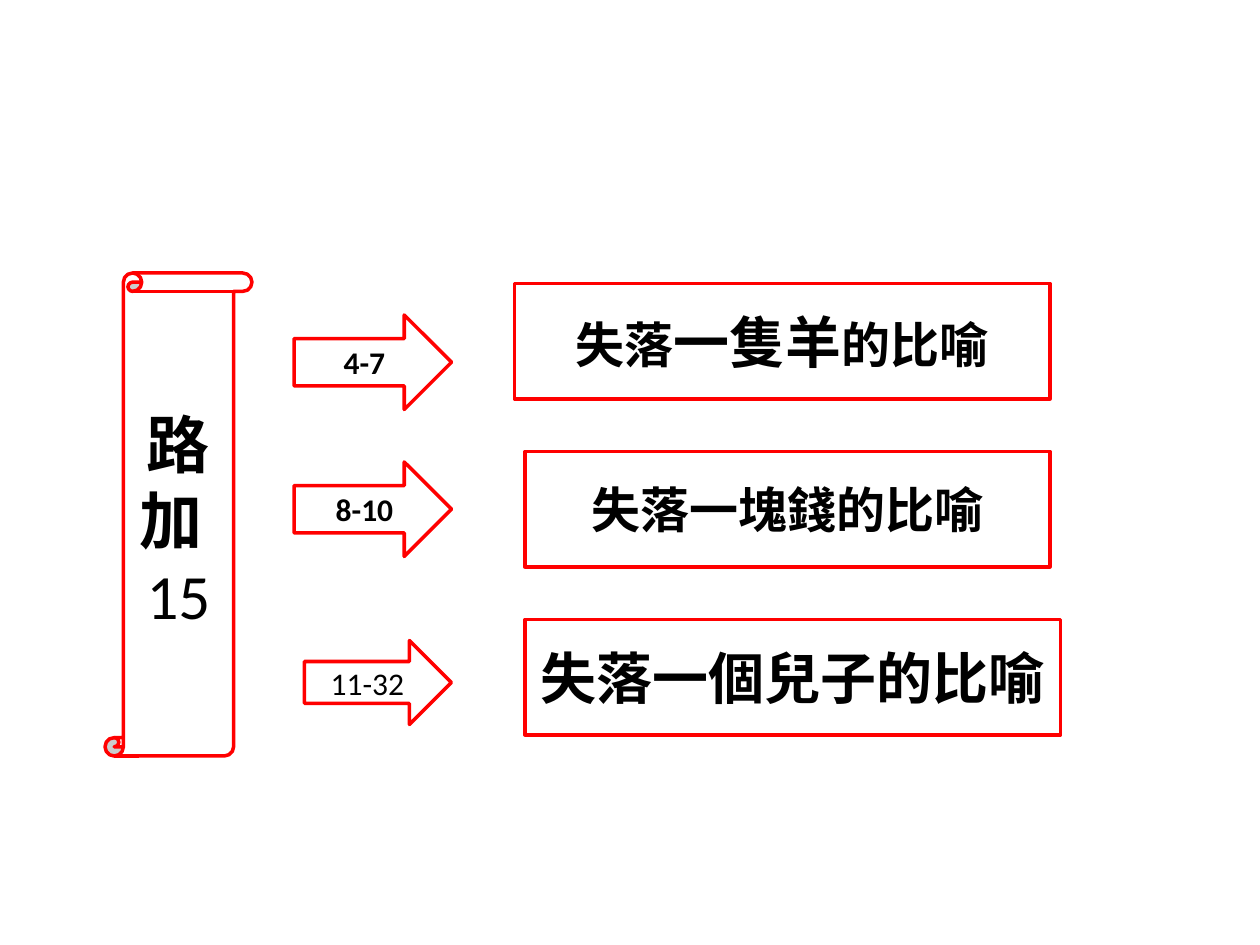
from dataclasses import dataclass

from pptx import Presentation
from pptx.dml.color import RGBColor
from pptx.enum.shapes import MSO_SHAPE
from pptx.enum.text import MSO_ANCHOR, PP_ALIGN
from pptx.slide import Slide
from pptx.util import Pt

COLORS = {"paper": "FFFFFF", "outline": "FF0000", "text": "000000"}
FONT = "Calibri"


@dataclass
class Span:
    text: str
    size: float
    bold: bool = True


@dataclass
class Panel:
    kind: MSO_SHAPE
    left: float
    top: float
    width: float
    height: float
    paragraphs: list[list[Span]]


def draw_panel(page: Slide, panel: Panel) -> None:
    """Draw a red-outlined shape with centred text."""
    box = page.shapes.add_shape(
        panel.kind, Pt(panel.left), Pt(panel.top), Pt(panel.width), Pt(panel.height)
    )
    box.shadow.inherit = False
    box.fill.solid()
    box.fill.fore_color.rgb = RGBColor.from_string(COLORS["paper"])
    box.line.color.rgb = RGBColor.from_string(COLORS["outline"])
    box.line.width = Pt(2)

    frame = box.text_frame
    frame.word_wrap = True
    frame.vertical_anchor = MSO_ANCHOR.MIDDLE
    for index, spans in enumerate(panel.paragraphs):
        para = frame.paragraphs[0] if index == 0 else frame.add_paragraph()
        para.alignment = PP_ALIGN.CENTER
        for span in spans:
            run = para.add_run()
            run.text = span.text
            run.font.name = FONT
            run.font.size = Pt(span.size)
            run.font.bold = span.bold
            run.font.color.rgb = RGBColor.from_string(COLORS["text"])


# Chapter scroll
SCROLL = Panel(
    MSO_SHAPE.VERTICAL_SCROLL, 60, 156, 84, 276,
    [[Span("路", 36)], [Span("加 ", 36)], [Span("15", 36, bold=False)]],
)

# Verse arrows
ARROW = MSO_SHAPE.RIGHT_ARROW
ARROWS = [
    Panel(ARROW, 168, 180, 90, 54, [[Span(" 4-7", 18)]]),
    Panel(ARROW, 168, 264, 90, 54, [[Span(" 8-10", 18)]]),
    Panel(ARROW, 174, 366, 84, 48, [[Span("11-32", 18, bold=False)]]),
]

# Parable boxes: left, width and text, evenly spaced down the page
PARABLE_TOP, PARABLE_PITCH, PARABLE_HEIGHT = 162, 96, 66
PARABLES = [
    (294, 306, [Span("失落", 28), Span("一隻羊", 32), Span("的比喻", 28)]),
    (300, 300, [Span("失落一塊錢的比喻", 28)]),
    (300, 306, [Span("失落一個兒子的比喻", 32)]),
]


def main() -> None:
    deck = Presentation()
    deck.slide_width, deck.slide_height = Pt(720), Pt(540)
    page = deck.slides.add_slide(deck.slide_layouts[6])

    for row, (left, width, spans) in enumerate(PARABLES):
        top = PARABLE_TOP + row * PARABLE_PITCH
        draw_panel(
            page,
            Panel(MSO_SHAPE.RECTANGLE, left, top, width, PARABLE_HEIGHT, [spans]),
        )
    for panel in [SCROLL, *ARROWS]:
        draw_panel(page, panel)

    deck.save("out.pptx")


if __name__ == "__main__":
    main()
